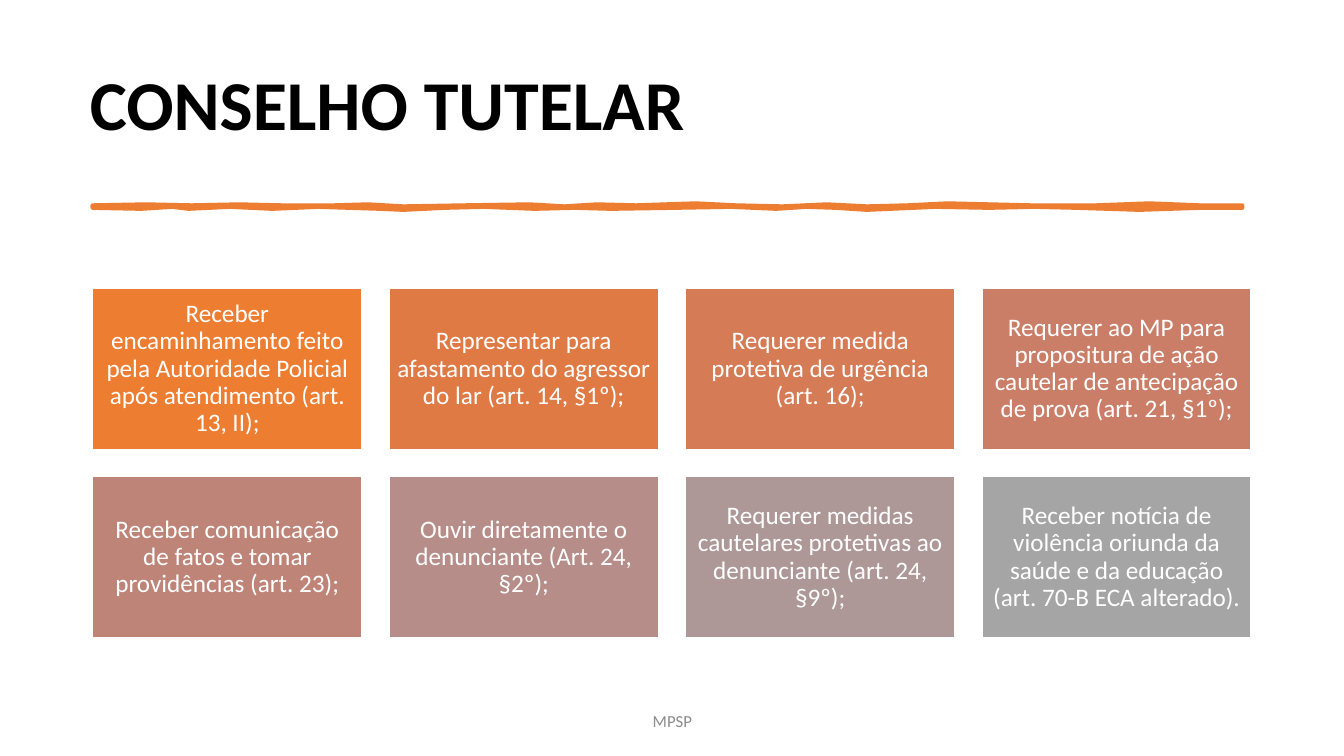
"""Builds the "Conselho Tutelar" slide: a title, a hand-drawn rule and eight duty cards."""
from pptx import Presentation
from pptx.dml.color import RGBColor
from pptx.enum.shapes import MSO_SHAPE
from pptx.enum.text import MSO_ANCHOR, MSO_AUTO_SIZE, PP_ALIGN
from pptx.util import Pt

RECTANGLE = MSO_SHAPE.RECTANGLE
TOP, MIDDLE = MSO_ANCHOR.TOP, MSO_ANCHOR.MIDDLE
LEFT, CENTER = PP_ALIGN.LEFT, PP_ALIGN.CENTER
NO_AUTOFIT = MSO_AUTO_SIZE.NONE
PX = 9144
ORANGE = "ED7D31"


def color(hex_value):
    return RGBColor.from_string(hex_value)


def write(frame, text, size, hex_value, align, anchor, bold=False):
    frame.word_wrap = True
    frame.auto_size = NO_AUTOFIT
    frame.vertical_anchor = anchor
    paragraph = frame.paragraphs[0]
    paragraph.text = text
    paragraph.alignment = align
    paragraph.font.name = "Calibri"
    paragraph.font.size = Pt(size)
    paragraph.font.bold = bold
    paragraph.font.color.rgb = color(hex_value)
    return paragraph


deck = Presentation()
deck.slide_width, deck.slide_height = 1333 * PX, 750 * PX
slide = deck.slides.add_slide(deck.slide_layouts[5])
shapes = slide.shapes

title = shapes.title
title.left, title.top, title.width, title.height = 79 * PX, 55 * PX, 848 * PX, 94 * PX
write(title.text_frame, "CONSELHO TUTELAR", 50, "000000", LEFT, TOP, bold=True)

upper_edge = [
    (92, 204), (145, 203), (190, 204), (237, 203), (280, 204), (331, 204),
    (365, 203), (400, 205), (460, 204), (525, 203), (560, 205), (592, 203),
    (631, 204), (690, 202), (730, 204), (776, 205), (820, 203), (860, 205),
    (900, 204), (940, 202), (1023, 204), (1087, 204), (1140, 202), (1190, 204),
    (1232, 204),
]
lower_edge = [
    (1232, 206), (1190, 206), (1130, 208), (1068, 206), (1026, 205), (981, 206),
    (928, 205), (860, 208), (829, 206), (800, 205), (770, 207), (725, 205),
    (669, 206), (606, 207), (570, 206), (530, 207), (480, 205), (441, 206),
    (400, 208), (377, 207), (316, 205), (270, 207), (228, 205), (187, 207),
    (171, 205), (140, 207), (92, 206),
]
outline = upper_edge + lower_edge
builder = shapes.build_freeform(*outline[0], scale=PX)
builder.add_line_segments(outline[1:], close=True)
rule = builder.convert_to_shape()
rule.shadow.inherit = False
rule.fill.solid()
rule.fill.fore_color.rgb = color(ORANGE)
rule.line.color.rgb = color(ORANGE)
rule.line.width = Pt(3.25)

footer = shapes.add_textbox(442 * PX, 695 * PX, 450 * PX, 40 * PX)
credit = write(footer.text_frame, "MPSP", 12, "8C8C8C", CENTER, MIDDLE)
credit.space_after = Pt(6)

duties = [
    ("Receber encaminhamento feito pela Autoridade Policial após atendimento (art. 13, II);", ORANGE),
    ("Representar para afastamento do agressor do lar (art. 14, §1º);", "E07A44"),
    ("Requerer medida protetiva de urgência (art. 16);", "D57B56"),
    ("Requerer ao MP para propositura de ação cautelar de antecipação de prova (art. 21, §1º);", "CA7E67"),
    ("Receber comunicação de fatos e tomar providências (art. 23);", "BF8478"),
    ("Ouvir diretamente o denunciante (Art. 24, §2º);", "B68D88"),
    ("Requerer medidas cautelares protetivas ao denunciante (art. 24, §9º);", "AD9897"),
    ("Receber notícia de violência oriunda da saúde e da educação (art. 70-B ECA alterado).", "A5A5A5"),
]
for index, (duty, card_color) in enumerate(duties):
    row, column = divmod(index, 4)
    card = shapes.add_shape(
        RECTANGLE, (92 + 294 * column) * PX, (286 + 187 * row) * PX, 267 * PX, 160 * PX
    )
    card.shadow.inherit = False
    card.fill.solid()
    card.fill.fore_color.rgb = color(card_color)
    card.line.color.rgb = color("FFFFFF")
    card.line.width = Pt(1)
    frame = card.text_frame
    frame.margin_left = frame.margin_right = frame.margin_top = frame.margin_bottom = 7 * PX
    paragraph = write(frame, duty, 18, "FFFFFF", CENTER, MIDDLE)
    paragraph.line_spacing = 0.9
    paragraph.space_after = Pt(6.3)

deck.save("out.pptx")
